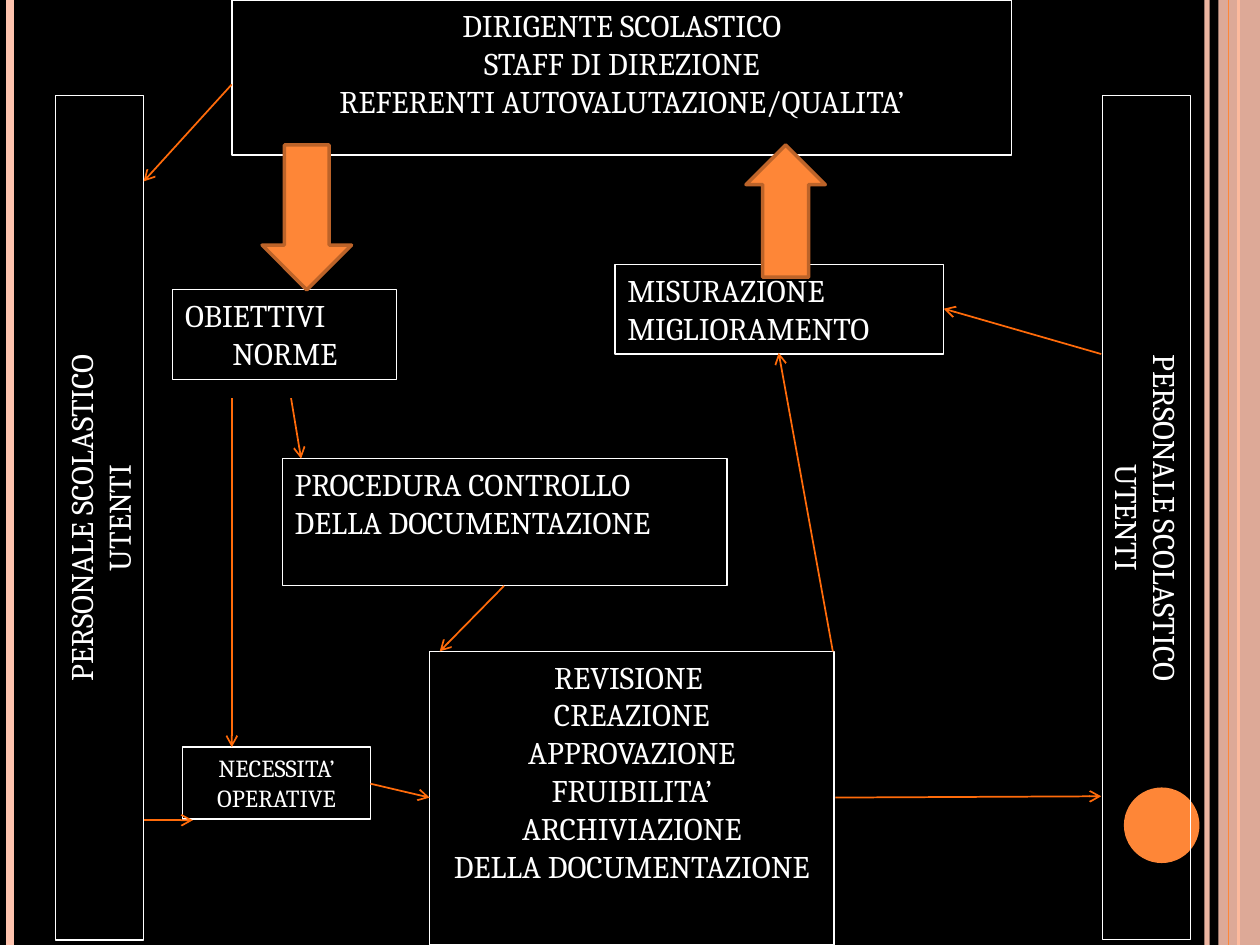
"""Build the school documentation-control flow diagram slide."""
from lxml import etree
from pptx import Presentation
from pptx.dml.color import RGBColor
from pptx.enum.shapes import MSO_CONNECTOR, MSO_SHAPE
from pptx.enum.text import MSO_ANCHOR, PP_ALIGN
from pptx.oxml.ns import qn
from pptx.util import Inches, Pt

BLACK = RGBColor(0x00, 0x00, 0x00)
WHITE = RGBColor(0xFF, 0xFF, 0xFF)
PEACH = RGBColor(0xFE, 0xC3, 0xAE)
ORANGE = RGBColor(0xFE, 0x86, 0x37)
DARK_ORANGE = RGBColor(0xFF, 0x6B, 0x0A)
BROWN = RGBColor(0xBC, 0x63, 0x29)
STRAIGHT = MSO_CONNECTOR.STRAIGHT
RECT, OVAL, DOWN = MSO_SHAPE.RECTANGLE, MSO_SHAPE.OVAL, MSO_SHAPE.DOWN_ARROW
LEFT, CENTER = PP_ALIGN.LEFT, PP_ALIGN.CENTER
TOP = MSO_ANCHOR.TOP

prs = Presentation()
prs.slide_width, prs.slide_height = Inches(10), Inches(7.5)
s = prs.slides.add_slide(prs.slide_layouts[6])
s.background.fill.solid()
s.background.fill.fore_color.rgb = BLACK


def add_line(x1, y1, x2, y2, color, width):
    c = s.shapes.add_connector(STRAIGHT, Inches(x1), Inches(y1), Inches(x2), Inches(y2))
    c.line.color.rgb = color
    c.line.width = Pt(width)
    etree.SubElement(c._element.spPr, qn("a:effectLst"))
    return c


def add_shape(kind, x, y, w, h, fill=None, line=None, width=0.75):
    sp = s.shapes.add_shape(kind, Inches(x), Inches(y), Inches(w), Inches(h))
    sp.shadow.inherit = False
    if fill is None:
        sp.fill.background()
    else:
        sp.fill.solid()
        sp.fill.fore_color.rgb = fill
    if line is None:
        sp.line.fill.background()
    else:
        sp.line.color.rgb = line
        sp.line.width = Pt(width)
    return sp


edge = add_line(9.58, 0, 9.58, 7.5, PEACH, 3)
add_line(0.08, 0, 0.08, 7.5, PEACH, 4.5)
add_line(9.83, 0, 9.83, 7.5, ORANGE, 1.5)
band = add_shape(RECT, 9.67, 0, 0.33, 7.5, PEACH)
add_line(9.75, 0, 9.75, 7.5, ORANGE, 0.75)
add_shape(OVAL, 8.92, 6.25, 0.6, 0.6, ORANGE)
for sp, alpha in ((edge, 93), (band, 87)):
    clr = sp._element.spPr.find(".//" + qn("a:srgbClr"))
    etree.SubElement(clr, qn("a:alpha"), val=str(alpha * 1000))

STAFF = ["PERSONALE SCOLASTICO", "UTENTI"]
boxes = [
    (1.84, 0, 6.19, 1.23, 0, 18, [CENTER] * 3,
     ["DIRIGENTE SCOLASTICO", "STAFF DI DIREZIONE", "REFERENTI AUTOVALUTAZIONE/QUALITA’"]),
    (-2.56, 3.76, 6.7, 0.7, 270, 18, [CENTER] * 2, STAFF),
    (5.75, 3.76, 6.7, 0.7, 90, 18, [CENTER] * 2, STAFF),
    (3.41, 5.17, 3.21, 2.33, 0, 18, [CENTER] * 6,
     ["REVISIONE ", "CREAZIONE", "APPROVAZIONE", "FRUIBILITA’", "ARCHIVIAZIONE",
      "DELLA DOCUMENTAZIONE"]),
    (2.24, 3.64, 3.53, 1.01, 0, 18, [LEFT], ["PROCEDURA CONTROLLO DELLA DOCUMENTAZIONE"]),
    (4.88, 2.1, 2.61, 0.71, 0, 18, [LEFT] * 2, ["MISURAZIONE", "MIGLIORAMENTO"]),
    (1.37, 2.3, 1.78, 0.71, 0, 18, [LEFT, CENTER], ["OBIETTIVI", "NORME"]),
    (1.45, 5.93, 1.49, 0.57, 0, 14, [CENTER], ["NECESSITA’ OPERATIVE"]),
]
for x, y, w, h, rotation, size, aligns, lines in boxes:
    sp = add_shape(RECT, x, y, w, h, line=WHITE)
    sp.rotation = rotation
    tf = sp.text_frame
    tf.word_wrap = True
    tf.vertical_anchor = TOP
    tf.text = "\n".join(lines)
    for p, align in zip(tf.paragraphs, aligns):
        p.alignment = align
        r = p.runs[0]
        r.font.name = "Cambria"
        r.font.size = Pt(size)
        r.font.color.rgb = WHITE

arrows = [
    (1.84, 0.67, 1.14, 1.44),
    (6.63, 6.33, 8.74, 6.32),
    (1.14, 6.51, 1.53, 6.51),
    (2.94, 6.22, 3.41, 6.33),
    (1.84, 3.16, 1.84, 5.93),
    (4, 4.65, 3.49, 5.17),
    (2.31, 3.16, 2.39, 3.64),
    (6.61, 5.17, 6.18, 2.8),
    (8.74, 2.81, 7.49, 2.45),
]
for ends in arrows:
    c = add_line(*ends, DARK_ORANGE, 1)
    etree.SubElement(c.line._get_or_add_ln(), qn("a:tailEnd"), type="arrow")

add_shape(DOWN, 2.08, 1.15, 0.71, 1.15, ORANGE, BROWN, 2)
up = add_shape(DOWN, 5.92, 1.15, 0.63, 1.05, ORANGE, BROWN, 2)
up.rotation = 180
up.adjustments[0] = 0.58

prs.save("out.pptx")
